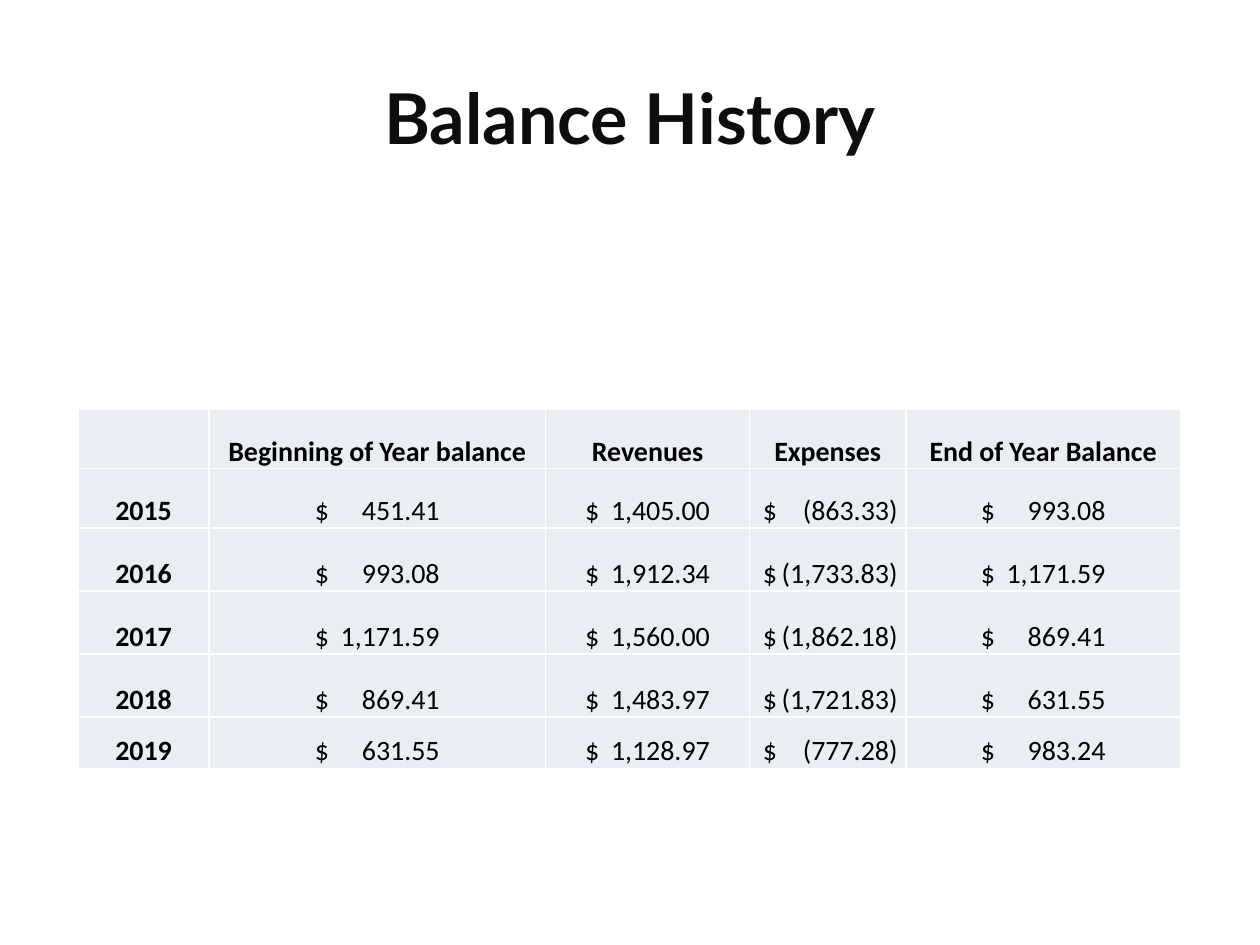
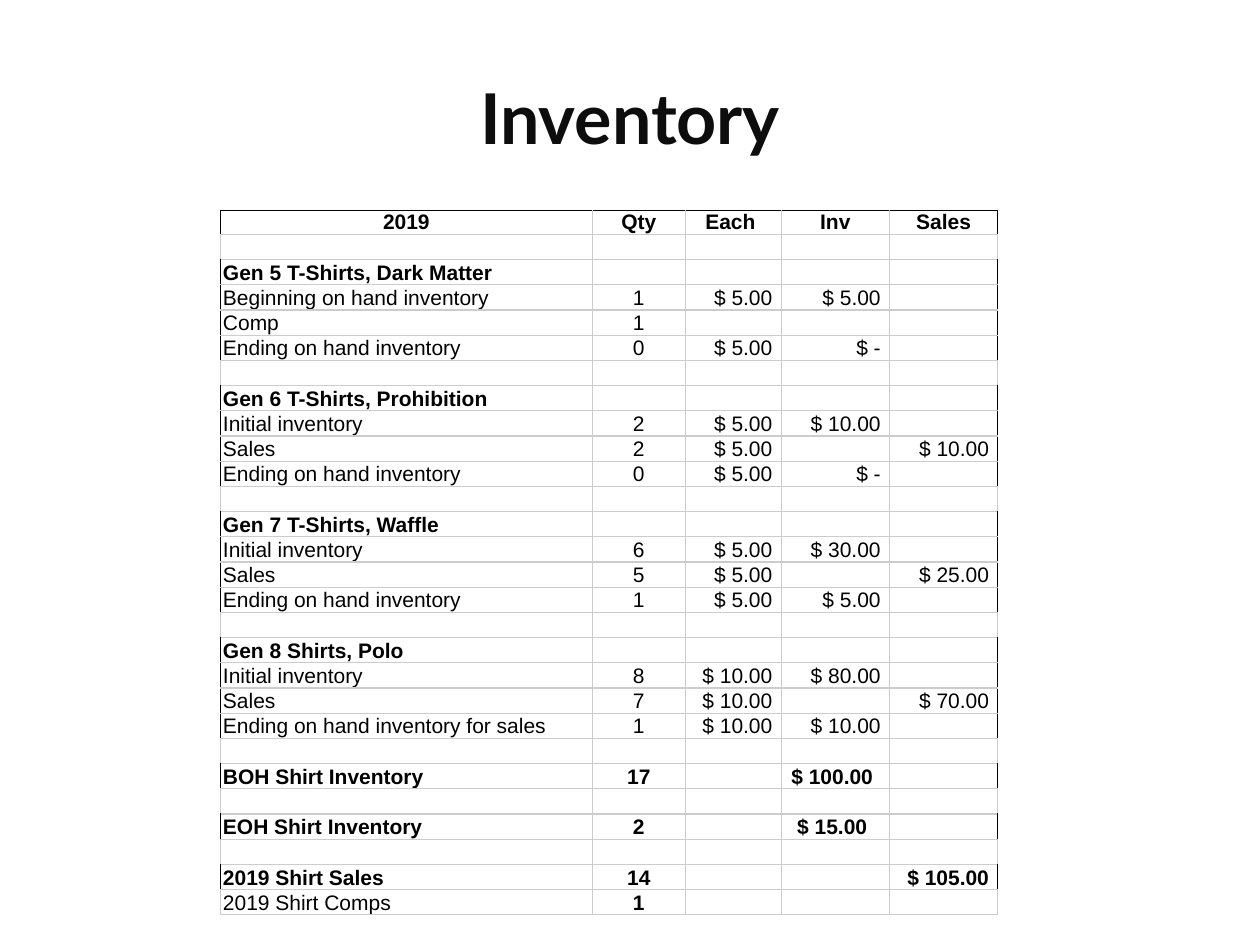
from dataclasses import dataclass

from lxml.etree import SubElement
from pptx import Presentation
from pptx.dml.color import RGBColor as Rgb
from pptx.enum.text import MSO_ANCHOR as Anchor, PP_ALIGN as Align
from pptx.oxml.ns import qn
from pptx.util import Inches, Pt

# Content: "\t" parts the currency sign from its amount
BALANCE = [
    ("", "Beginning of Year balance", "Revenues", "Expenses", "End of Year Balance"),
    ("2015", "$\t451.41", "$\t1,405.00", "$\t(863.33)", "$\t993.08"),
    ("2016", "$\t993.08", "$\t1,912.34", "$\t(1,733.83)", "$\t1,171.59"),
    ("2017", "$\t1,171.59", "$\t1,560.00", "$\t(1,862.18)", "$\t869.41"),
    ("2018", "$\t869.41", "$\t1,483.97", "$\t(1,721.83)", "$\t631.55"),
    ("2019", "$\t631.55", "$\t1,128.97", "$\t(777.28)", "$\t983.24"),
]

ALL, NONE, QTY = {0, 1, 2, 3, 4}, set(), {1}
BLANK = (NONE, ("", "", "", "", ""))
GROUPS = [
    ("Gen 5 T-Shirts, Dark Matter", [
        ("Beginning on hand inventory", "1", "$ 5.00", "$ 5.00", ""),
        ("Comp", "1", "", "", ""),
        ("Ending on hand inventory", "0", "$ 5.00", "$ -", "")]),
    ("Gen 6 T-Shirts, Prohibition", [
        ("Initial inventory", "2", "$ 5.00", "$ 10.00", ""),
        ("Sales", "2", "$ 5.00", "", "$ 10.00"),
        ("Ending on hand inventory", "0", "$ 5.00", "$ -", "")]),
    ("Gen 7 T-Shirts, Waffle", [
        ("Initial inventory", "6", "$ 5.00", "$ 30.00", ""),
        ("Sales", "5", "$ 5.00", "", "$ 25.00"),
        ("Ending on hand inventory", "1", "$ 5.00", "$ 5.00", "")]),
    ("Gen 8 Shirts, Polo", [
        ("Initial inventory", "8", "$ 10.00", "$ 80.00", ""),
        ("Sales", "7", "$ 10.00", "", "$ 70.00"),
        ("Ending on hand inventory for sales", "1", "$ 10.00", "$ 10.00", "")]),
]
TOTALS = [
    (ALL, ("BOH Shirt Inventory", "17", "", "$ 100.00", "")),
    BLANK,
    (ALL, ("EOH Shirt Inventory", "2", "", "$ 15.00", "")),
    BLANK,
    (ALL, ("2019 Shirt Sales", "14", "", "", "$ 105.00")),
    (QTY, ("2019 Shirt Comps", "1", "", "", "")),
]


@dataclass(frozen=True)
class Theme:
    ink: str = "000000"
    title: str = "0D0D0D"
    pale: str = "E9EDF4"
    white: str = "FFFFFF"
    grid: str = "CCCCCC"
    head: tuple = ("Lato", 40)
    body: tuple = ("Calibri", 16)
    sheet: tuple = ("Arial", 12)


THEME = Theme()


def style(font, face, color, bold):
    font.name, font.size, font.bold = face[0], Pt(face[1]), bold
    font.color.rgb = Rgb.from_string(color)


def add_line(parent, tag, color, width):
    line = SubElement(parent, qn(tag), w=str(Pt(width)))
    fill = SubElement(line, qn("a:solidFill"))
    SubElement(fill, qn("a:srgbClr"), val=color)
    return line


def add_slide(deck, text):
    slide = deck.slides.add_slide(deck.slide_layouts[5])
    title = slide.shapes.title
    title.left, title.top = Inches(0.5), Inches(0.3)
    title.width, title.height = Inches(9), Inches(1.25)
    frame = title.text_frame
    frame.vertical_anchor = Anchor.MIDDLE
    para = frame.paragraphs[0]
    para.alignment = Align.CENTER
    run = para.add_run()
    run.text = text
    style(run.font, THEME.head, THEME.title, True)
    props = run.font._element
    props.insert(0, add_line(props, "a:ln", THEME.title, 1.5))
    return slide


def add_grid(slide, left, top, cols, rows):
    shape = slide.shapes.add_table(
        len(rows), len(cols), Inches(left), Inches(top),
        Inches(sum(cols)), Inches(sum(rows)))
    table = shape.table
    table.first_row = table.horz_banding = False
    for part, sizes in ((table.columns, cols), (table.rows, rows)):
        for item, size in zip(part, sizes):
            if part is table.columns:
                item.width = Inches(size)
            else:
                item.height = Inches(size)
    return table


def fill_cell(cell, text, face, bold, align, pads, edges, width, fill=None, tab=None):
    """Pads run left, right; edges are colours for left, right, top, bottom."""
    cell.margin_left, cell.margin_right = map(Inches, pads)
    cell.margin_top = cell.margin_bottom = 0
    cell.vertical_anchor = Anchor.BOTTOM
    for side, color in zip("LRTB", edges):
        add_line(cell._tc.get_or_add_tcPr(), "a:ln" + side, color, width)
    if fill:
        cell.fill.solid()
        cell.fill.fore_color.rgb = Rgb.from_string(fill)
    else:
        cell.fill.background()
    para = cell.text_frame.paragraphs[0]
    para.alignment = align
    if tab:
        stops = SubElement(para._p.get_or_add_pPr(), qn("a:tabLst"))
        SubElement(stops, qn("a:tab"), pos=str(Inches(tab)), algn="r")
    if text:
        para.add_run().text = text
    else:
        para._p.get_or_add_endParaRPr().set("sz", str(face[1] * 100))
    style(para.font, face, THEME.ink, bold)


def add_balance(deck):
    slide = add_slide(deck, "Balance History")
    cols = (1.04, 2.67, 1.62, 1.24, 2.18)
    spans = (0, 0.99, 0.99, 1.07, 0.99)  # from currency sign to last digit
    table = add_grid(slide, 0.62, 3.25, cols, (0.47, 0.47, 0.5, 0.5, 0.5, 0.41))
    for r, row in enumerate(BALANCE):
        for c, text in enumerate(row):
            money = "\t" in text
            pad = (cols[c] - spans[c]) / 2 if money else 0.01
            if money and c == 3:
                pad += 0.02
            fill_cell(table.cell(r, c), text, THEME.body, not (r and c),
                      Align.LEFT if money else Align.CENTER, (pad, 0.01),
                      [THEME.white] * 4, 1, THEME.pale, spans[c] if money else None)


def stock_rows():
    rows = [(ALL, ("2019", "Qty", "Each ", "Inv", "Sales")), BLANK]
    for name, lines in GROUPS:
        rows.append((ALL, (name, "", "", "", "")))
        rows += [(NONE, line) for line in lines]
        rows.append(BLANK)
    return rows + TOTALS


def add_stock(deck):
    slide = add_slide(deck, "Inventory")
    rows = stock_rows()
    table = add_grid(slide, 1.75, 1.67, (2.95, 0.74, 0.76, 0.86, 0.86),
                     [0.19] + [0.2] * (len(rows) - 1))
    for r, (bold, row) in enumerate(rows):
        framed = row[0] and r < len(rows) - 1
        for c, text in enumerate(row):
            money = text.startswith("$")
            if r == 0 or c == 1 or (c == 3 and c in bold):
                align = Align.CENTER
            else:
                align = Align.RIGHT if money else Align.LEFT
            dark = (framed and c == 0, framed and c == 4, r == 0, False)
            edges = [THEME.ink if d else THEME.grid for d in dark]
            fill_cell(table.cell(r, c), text, THEME.sheet, c in bold, align,
                      (0.02, 0.07 if money else 0.02), edges, 0.75)


def main():
    deck = Presentation()
    deck.slide_width, deck.slide_height = Inches(10), Inches(7.5)
    add_balance(deck)
    add_stock(deck)
    deck.save("out.pptx")


if __name__ == "__main__":
    main()
